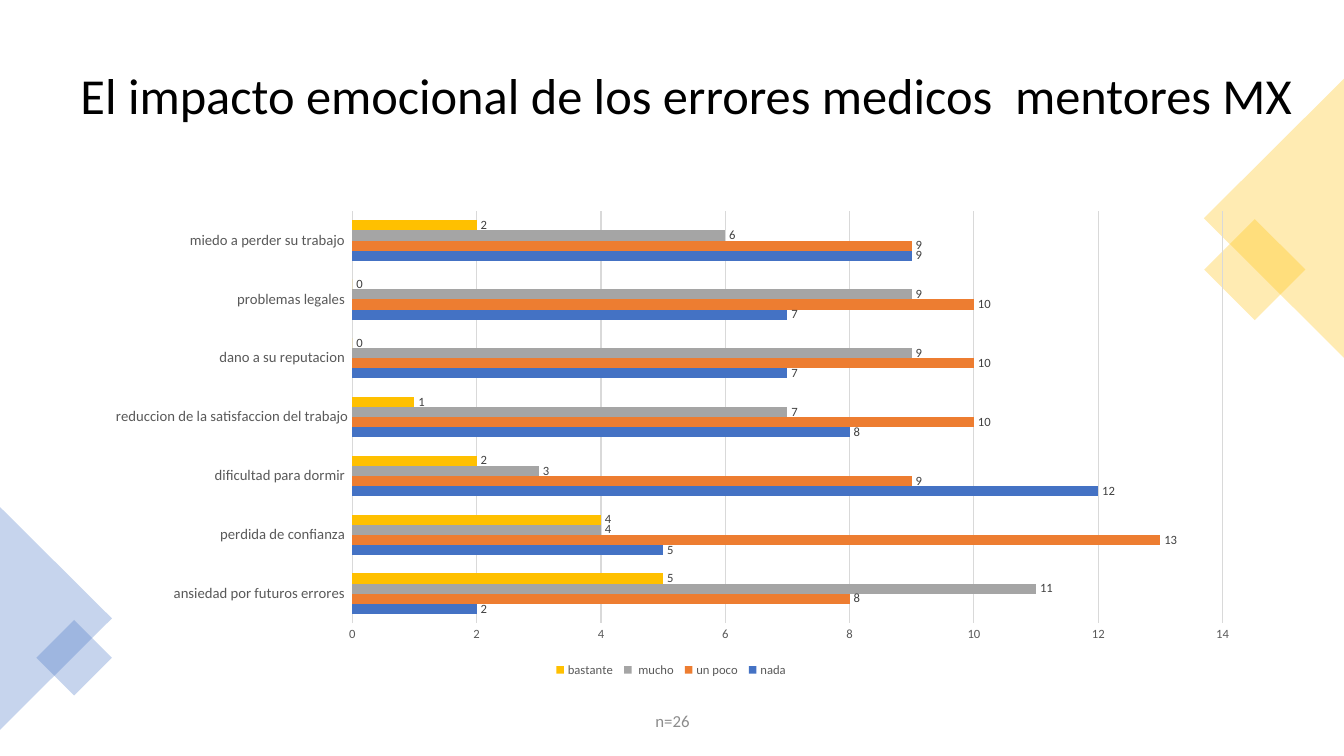
from dataclasses import dataclass

from lxml.etree import SubElement
from pptx import Presentation
from pptx.chart.data import CategoryChartData
from pptx.dml.color import RGBColor
from pptx.enum.chart import XL_CHART_TYPE as ChartType
from pptx.enum.chart import XL_LABEL_POSITION as LabelPos
from pptx.enum.chart import XL_LEGEND_POSITION as LegendPos
from pptx.enum.chart import XL_TICK_MARK as Tick
from pptx.enum.shapes import MSO_SHAPE as Shape
from pptx.enum.text import MSO_ANCHOR as Anchor
from pptx.enum.text import PP_ALIGN as Align
from pptx.oxml.ns import qn
from pptx.util import Inches, Pt


@dataclass(frozen=True)
class Theme:
    """Colours and type sizes of the slide."""
    font: str = "Calibri"
    black: str = "000000"
    note: str = "8C8C8C"
    axis: str = "595959"
    label: str = "404040"
    grid: str = "D9D9D9"
    blue: str = "4472C4"
    orange: str = "ED7D31"
    gray: str = "A5A5A5"
    gold: str = "FFC000"
    title_size: float = 36
    note_size: float = 12
    chart_size: float = 10
    category_size: float = 10.5
    small_size: float = 9
    line_width: float = 0.75
    opacity: int = 30


def apply(target, formats):
    """Set each attribute of target named in formats."""
    for name, value in formats.items():
        setattr(target, name, value)


class SlideBuilder:
    """Draws themed elements on the current slide."""

    def __init__(self, s, theme):
        """Keep the slide and its theme."""
        self.s, self.theme = s, theme

    def font(self, font, size, color):
        """Format a font."""
        apply(font, {"name": self.theme.font, "size": Pt(size)})
        font.color.rgb = RGBColor.from_string(color)

    def line(self, line):
        """Format a thin chart line."""
        line.width = Pt(self.theme.line_width)
        line.color.rgb = RGBColor.from_string(self.theme.grid)

    def text(self, box, text, size, color, formats):
        """Add a one-paragraph text box."""
        tf = self.s.shapes.add_textbox(*map(Inches, box)).text_frame
        apply(tf, {"word_wrap": True, "vertical_anchor": Anchor.MIDDLE})
        p = tf.paragraphs[0]
        apply(p, formats)
        r = p.add_run()
        r.text = text
        self.font(r.font, size, color)

    def shape(self, kind, box, rotation, color):
        """Add a translucent rotated shape."""
        sp = self.s.shapes.add_shape(kind, *map(Inches, box))
        sp.rotation = rotation
        sp.shadow.inherit = False
        sp.line.fill.background()
        sp.fill.solid()
        sp.fill.fore_color.rgb = RGBColor.from_string(color)
        fill = sp.fill._xPr.find(qn("a:solidFill"))
        SubElement(fill[0], qn("a:alpha"), val=str(self.theme.opacity * 1000))

    def bar_chart(self, box, categories, series):
        """Add a clustered bar chart with value labels and a bottom legend."""
        t = self.theme
        data = CategoryChartData(number_format="General")
        data.categories = categories
        for name, values, _ in series:
            data.add_series(name, values)
        chart = self.s.shapes.add_chart(
            ChartType.BAR_CLUSTERED, *map(Inches, box), data).chart
        apply(chart, {"has_title": False, "has_legend": True})
        self.font(chart.font, t.chart_size, t.black)
        apply(chart.legend, {"position": LegendPos.BOTTOM, "include_in_layout": False})
        self.font(chart.legend.font, t.small_size, t.axis)

        ticks = {"major_tick_mark": Tick.NONE, "minor_tick_mark": Tick.NONE}
        cat, val = chart.category_axis, chart.value_axis
        apply(cat, ticks)
        self.font(cat.tick_labels.font, t.category_size, t.axis)
        self.line(cat.format.line)
        apply(val, {**ticks, "minimum_scale": 0, "maximum_scale": 14, "major_unit": 2})
        self.font(val.tick_labels.font, t.small_size, t.axis)
        val.format.line.fill.background()
        self.line(val.major_gridlines.format.line)

        plot = chart.plots[0]
        apply(plot, {"gap_width": 182, "overlap": 0, "vary_by_categories": False})
        for ser, (_, _, color) in zip(plot.series, series):
            ser.format.fill.solid()
            ser.format.fill.fore_color.rgb = RGBColor.from_string(color)
            labels = ser.data_labels
            apply(labels, {"show_value": True, "position": LabelPos.OUTSIDE_END})
            self.font(labels.font, t.small_size, t.label)


def main():
    """Build and save the slide."""
    prs = Presentation()
    apply(prs, {"slide_width": Inches(13.33), "slide_height": Inches(7.5)})
    t = Theme()
    b = SlideBuilder(prs.slides.add_slide(prs.slide_layouts[6]), t)

    b.text((0.7, 0.35, 12.24, 1.24),
           "El impacto emocional de los errores medicos  mentores MX",
           t.title_size, t.black, {"line_spacing": 0.9})
    for kind, box, rotation, color in (
        (Shape.RECTANGLE, (12.09, 2.32, 0.71, 0.71), 45, t.gold),
        (Shape.ISOSCELES_TRIANGLE, (11.25, 1.47, 2.77, 1.39), 270, t.gold),
        (Shape.ISOSCELES_TRIANGLE, (-0.55, 5.58, 2.21, 1.11), 90, t.blue),
        (Shape.RECTANGLE, (0.47, 6.26, 0.53, 0.53), 45, t.blue),
    ):
        b.shape(kind, box, rotation, color)
    b.text((4.42, 6.95, 4.5, 0.4), "n=26", t.note_size, t.note,
           {"alignment": Align.CENTER, "space_after": Pt(6)})
    b.bar_chart(
        (0.92, 2, 11.5, 4.76),
        ("ansiedad por futuros errores ", "perdida de confianza ",
         "dificultad para dormir ", "reduccion de la satisfaccion del trabajo",
         "dano a su reputacion ", "problemas legales ",
         "miedo a perder su trabajo "),
        (("nada ", (2, 5, 12, 8, 7, 7, 9), t.blue),
         ("un poco ", (8, 13, 9, 10, 10, 10, 9), t.orange),
         (" mucho ", (11, 4, 3, 7, 9, 9, 6), t.gray),
         ("bastante ", (5, 4, 2, 1, 0, 0, 2), t.gold)))
    prs.save("out.pptx")


if __name__ == "__main__":
    main()
